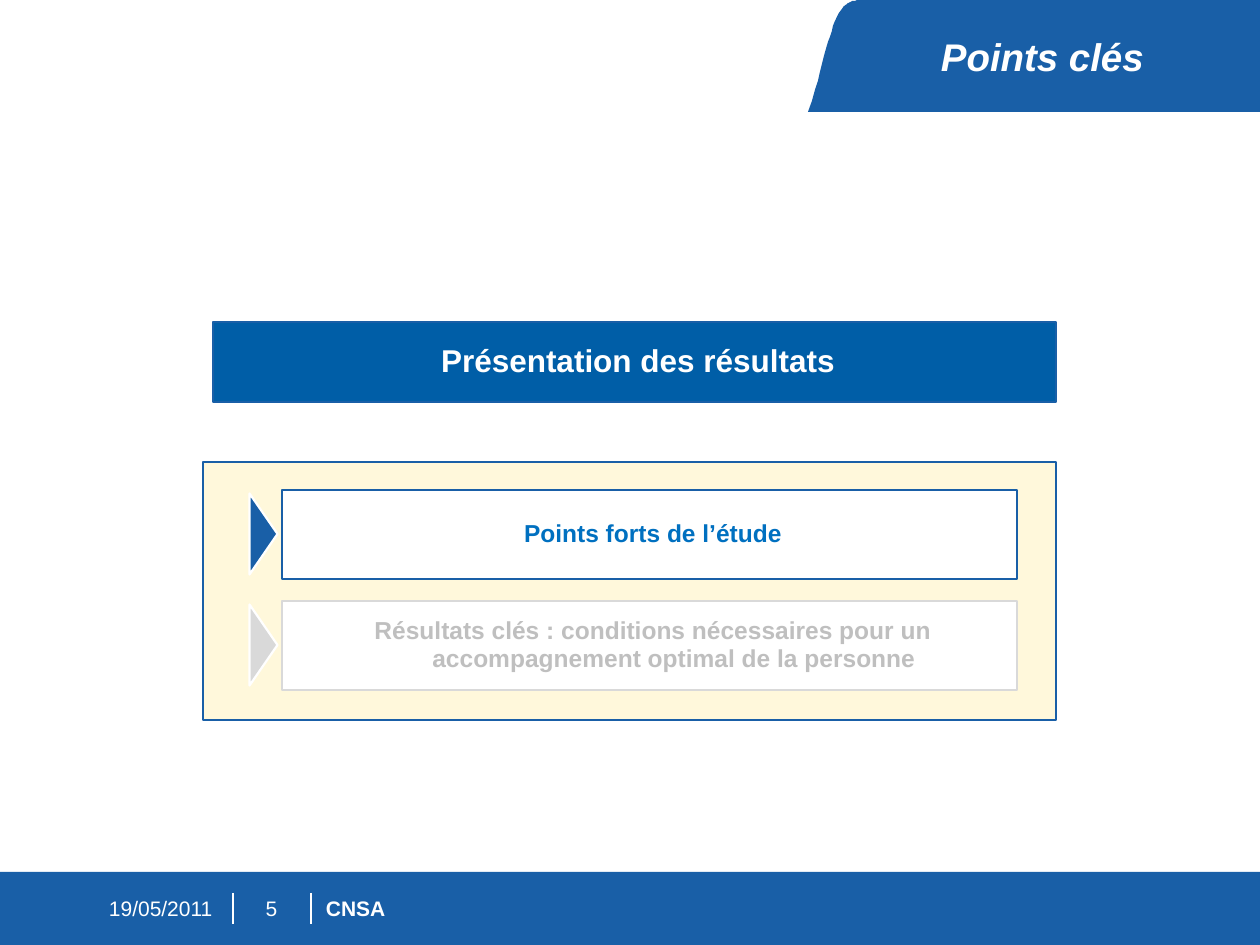
from lxml import etree
from pptx import Presentation
from pptx.dml.color import RGBColor
from pptx.enum.shapes import MSO_CONNECTOR, MSO_SHAPE
from pptx.enum.text import MSO_ANCHOR, PP_ALIGN
from pptx.oxml.ns import qn
from pptx.util import Pt

RECTANGLE, TRIANGLE = MSO_SHAPE.RECTANGLE, MSO_SHAPE.ISOSCELES_TRIANGLE
STRAIGHT = MSO_CONNECTOR.STRAIGHT
MIDDLE = MSO_ANCHOR.MIDDLE
LEFT, CENTER = PP_ALIGN.LEFT, PP_ALIGN.CENTER

PX = 914400 / 126
THEME = {
    "font": "Arial",
    "blue": "195FA7", "banner": "005EA7", "active": "0070C0",
    "cream": "FFEB99", "white": "FFFFFF",
    "muted": "D9D9D9", "muted_text": "BFBFBF",
    "title": 22, "heading": 18, "item": 14, "footer": 12,
}


def paint(shape, fill, line=None, width=1.5):
    shape.shadow.inherit = False
    shape.fill.solid()
    shape.fill.fore_color.rgb = RGBColor.from_string(THEME[fill])
    if line:
        shape.line.color.rgb = RGBColor.from_string(THEME[line])
        shape.line.width = Pt(width)
    else:
        shape.line.fill.background()


def write(shape, text, size, color, align=CENTER, bold=False, italic=False, hanging=False):
    frame = shape.text_frame
    frame.word_wrap = True
    frame.vertical_anchor = MIDDLE
    frame.margin_top = frame.margin_bottom = 0
    frame.margin_left = frame.margin_right = round(49 * PX) if hanging else 0
    para = frame.paragraphs[0]
    para.alignment = align
    if hanging:
        para.line_spacing = 0.95
        properties = para._p.get_or_add_pPr()
        properties.set("marL", str(round(49 * PX)))
        properties.set("indent", str(round(-42 * PX)))
    span = para.add_run()
    span.text = text
    span.font.name = THEME["font"]
    span.font.size = Pt(THEME[size])
    span.font.bold = bold
    span.font.italic = italic
    span.font.color.rgb = RGBColor.from_string(THEME[color])


deck = Presentation()
deck.slide_width, deck.slide_height = round(1260 * PX), round(945 * PX)
page = deck.slides.add_slide(deck.slide_layouts[6])
shapes = page.shapes

# Title tab: its curved edge is sampled from two Bezier segments
curves = [
    [(864, 0), (849, 0), (848, 4), (844, 6)],
    [(844, 6), (830, 24), (828, 50), (808, 112)],
]
edge = []
for curve in curves:
    for step in range(1, 17):
        t = step / 16
        weights = [(1 - t) ** 3, 3 * t * (1 - t) ** 2, 3 * t * t * (1 - t), t ** 3]
        edge.append(tuple(sum(w * point[axis] for w, point in zip(weights, curve))
                          for axis in (0, 1)))
outline = shapes.build_freeform(1260, 0, scale=PX)
outline.add_line_segments([(864, 0)] + edge + [(1260, 112)], close=True)
paint(outline.convert_to_shape(), "blue")

title = shapes.add_textbox(*[round(v * PX) for v in (859, 32, 367, 49)])
write(title, "Points clés", "title", "white", bold=True, italic=True)

# Footer band, separators and labels
footer = shapes.add_shape(RECTANGLE, *[round(v * PX) for v in (0, 872, 1260, 73)])
paint(footer, "blue")

for x in (233, 311):
    separator = shapes.add_connector(
        STRAIGHT, *[round(v * PX) for v in (x, 893, x, 924)])
    separator.line.color.rgb = RGBColor.from_string(THEME["white"])
    separator.line.width = Pt(0.75)
    etree.SubElement(separator._element.spPr, qn("a:effectLst"))

for text, left, width, align, bold in [
    ("19/05/2011", 109, 110, LEFT, False),
    ("5", 247, 49, CENTER, False),
    ("CNSA", 326, 552, LEFT, True),
]:
    label = shapes.add_textbox(*[round(v * PX) for v in (left, 891, width, 34)])
    write(label, text, "footer", "white", align, bold)

# Section banner
banner = shapes.add_shape(RECTANGLE, *[round(v * PX) for v in (213, 322, 843, 80)])
paint(banner, "banner", "blue")
write(banner, "Présentation des résultats", "heading", "white", bold=True, hanging=True)

# Translucent panel behind the agenda
panel = shapes.add_shape(RECTANGLE, *[round(v * PX) for v in (203, 462, 853, 258)])
paint(panel, "cream", "blue")
panel_color = panel._element.spPr.find(qn("a:solidFill"))[0]
etree.SubElement(panel_color, qn("a:alpha")).set("val", "35000")

# Agenda items, each with a marker pointing right
items = [
    ("Points forts de l’étude", "blue", "active"),
    ("Résultats clés : conditions nécessaires pour un accompagnement optimal de la personne",
     "muted", "muted_text"),
]
for row, (text, accent, text_color) in enumerate(items):
    top = 490 + 111 * row
    marker = shapes.add_shape(
        TRIANGLE, *[round(v * PX) for v in (223, top + 30, 81, 28)])
    marker.rotation = 90
    paint(marker, accent, "white", 1.25)
    box = shapes.add_shape(RECTANGLE, *[round(v * PX) for v in (282, top, 735, 89)])
    paint(box, "white", accent)
    write(box, text, "item", text_color, bold=True, hanging=True)

deck.save("out.pptx")
